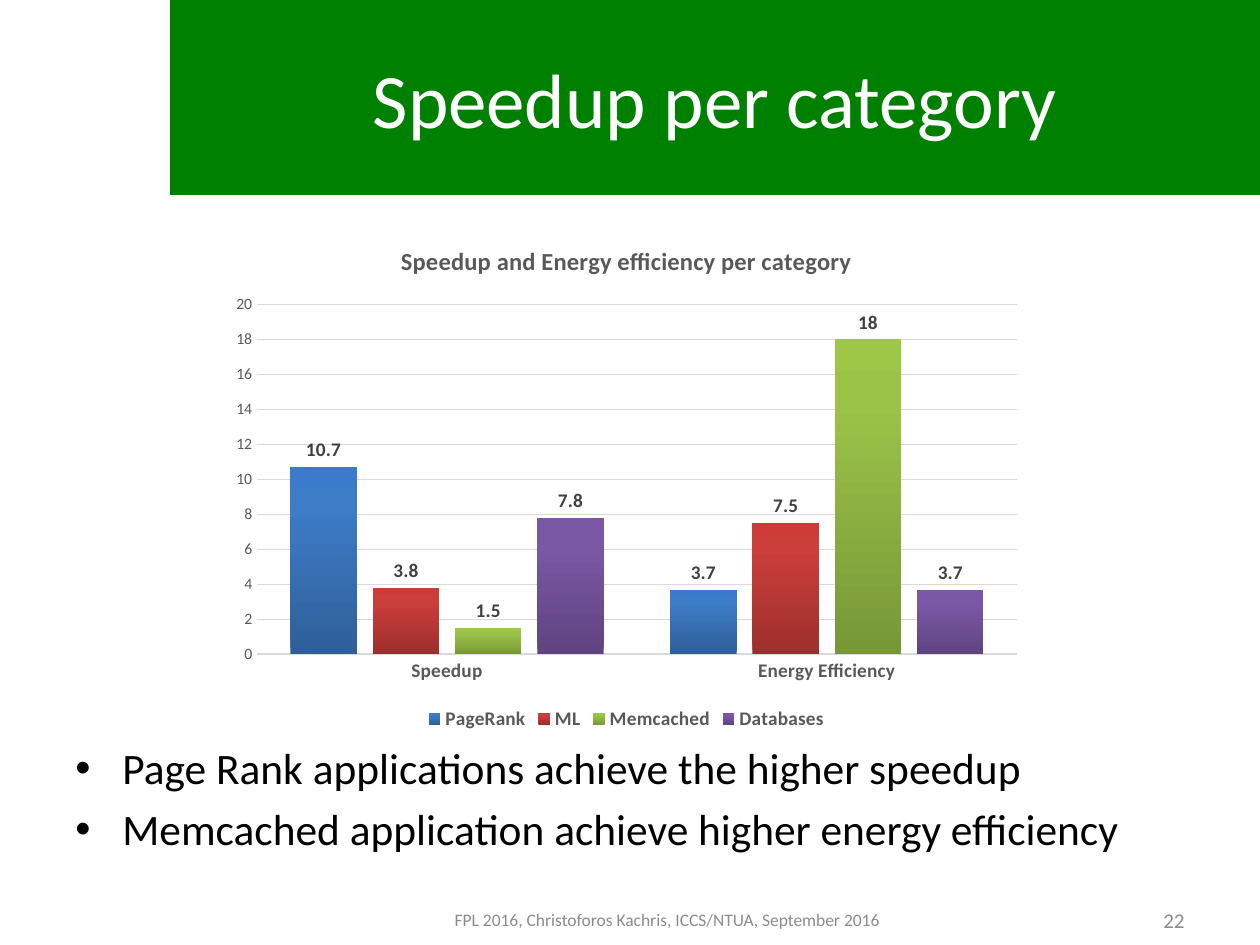
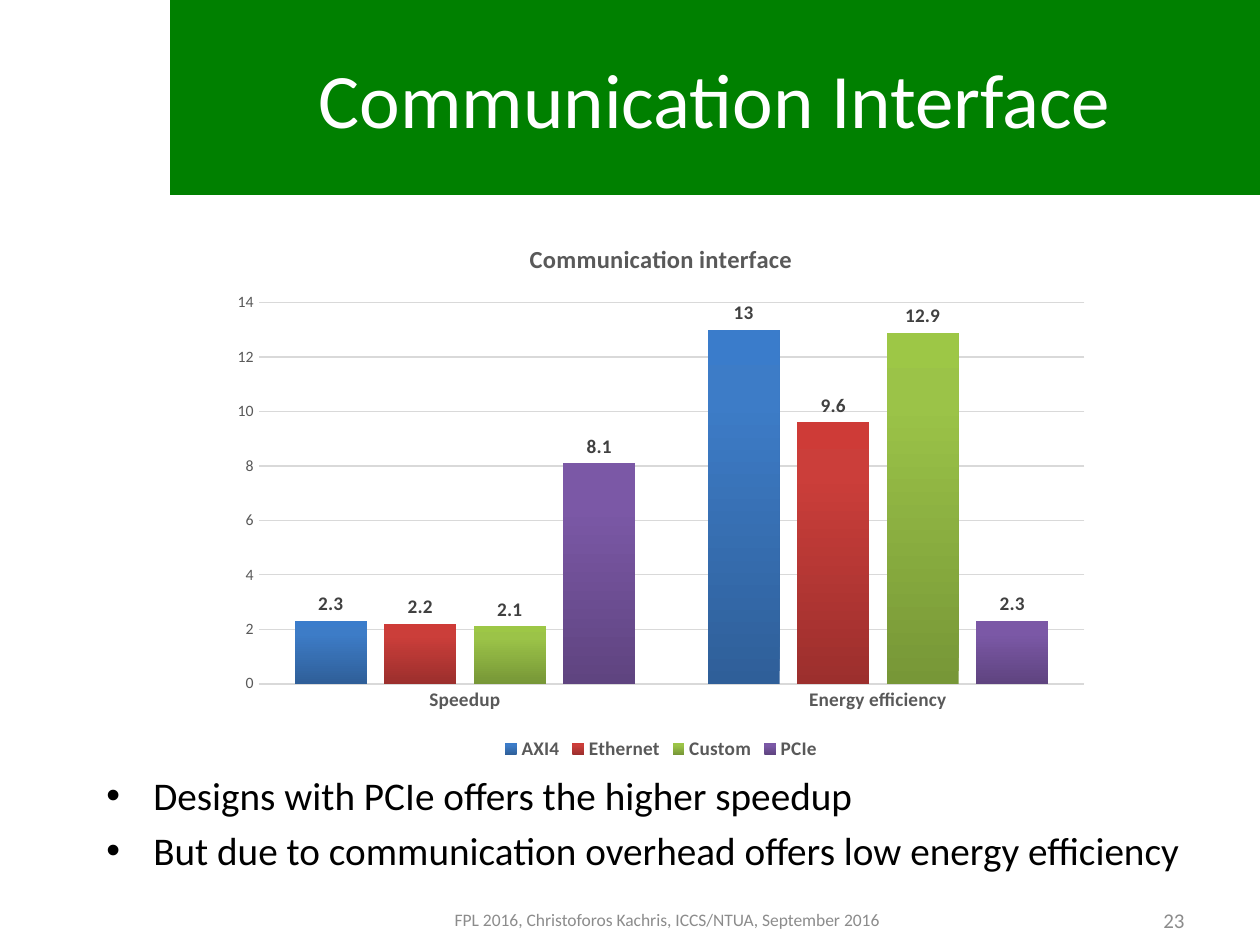
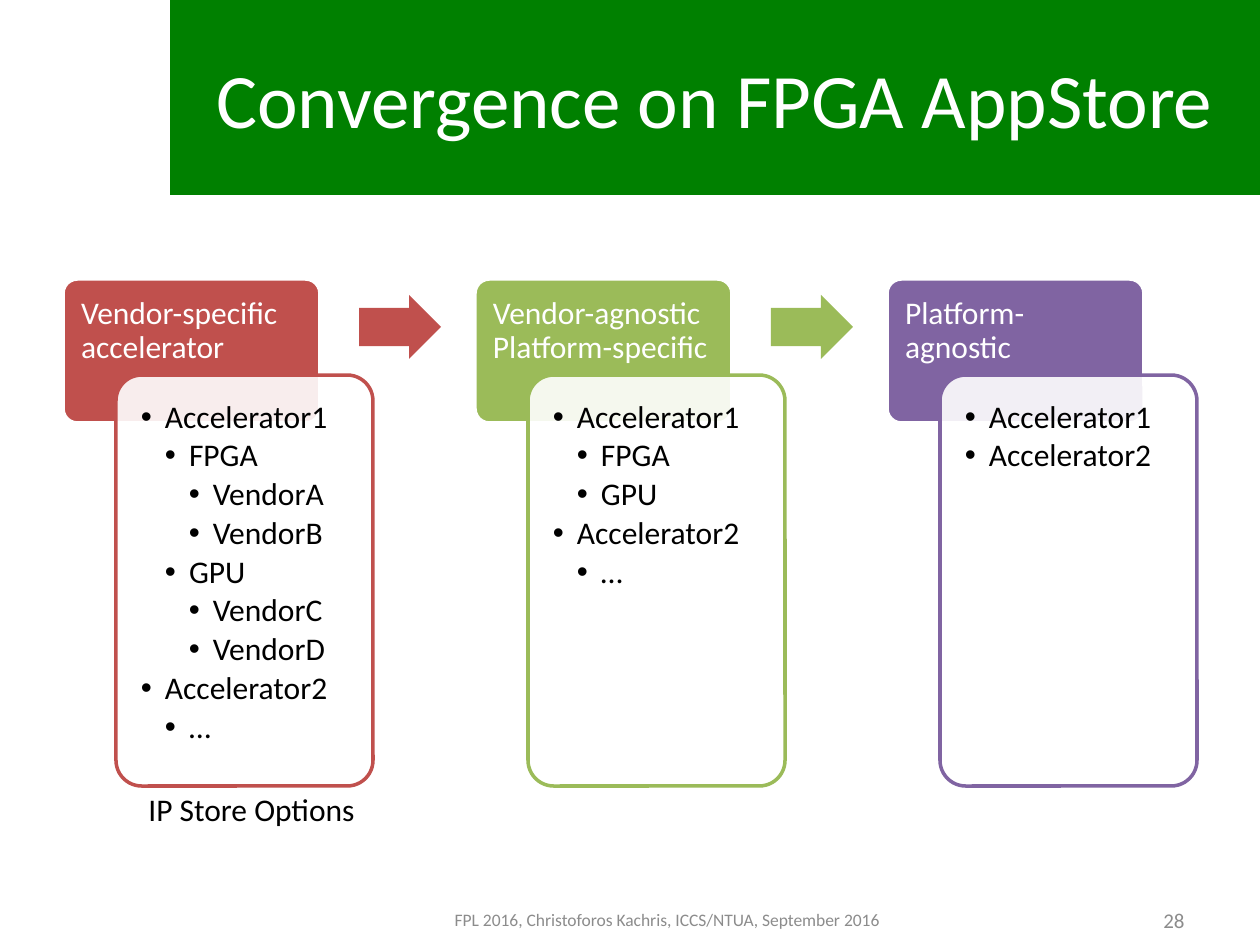
from copy import deepcopy

from lxml import etree
from pptx import Presentation
from pptx.chart.data import CategoryChartData
from pptx.dml.color import RGBColor
from pptx.enum.chart import (XL_CHART_TYPE, XL_LABEL_POSITION,
                             XL_LEGEND_POSITION, XL_TICK_MARK)
from pptx.enum.shapes import MSO_SHAPE
from pptx.enum.text import MSO_ANCHOR, PP_ALIGN
from pptx.oxml.ns import qn
from pptx.util import Pt

COLUMN = XL_CHART_TYPE.COLUMN_CLUSTERED
OUTSIDE = XL_LABEL_POSITION.OUTSIDE_END
BELOW = XL_LEGEND_POSITION.BOTTOM
NO_TICK = XL_TICK_MARK.NONE
RECT, ROUND, ARROW = (MSO_SHAPE.RECTANGLE, MSO_SHAPE.ROUNDED_RECTANGLE,
                      MSO_SHAPE.RIGHT_ARROW)
TOP, MIDDLE = MSO_ANCHOR.TOP, MSO_ANCHOR.MIDDLE
LEFT, CENTER, RIGHT = PP_ALIGN.LEFT, PP_ALIGN.CENTER, PP_ALIGN.RIGHT

SCALE = 914400 / 126
FONT = "Calibri"
FOOTER = "FPL 2016, Christoforos Kachris, ICCS/NTUA, September 2016"
COLORS = {
    "band": "008000", "white": "FFFFFF", "black": "000000", "foot": "8C8C8C",
    "axis": "595959", "label": "404040", "grid": "D9D9D9",
    "red": "C0504D", "green": "9BBB59", "purple": "8064A2",
}
STOPS = (0, 0.8, 1)
BARS = (
    ("2F5F99", "3D7CC7", "3A7CCB"),
    ("9C2F2D", "CB3E3A", "CE3B37"),
    ("779737", "9BC348", "9DC746"),
    ("5F4480", "7B58A6", "7C57A8"),
)


def px(n):
    return round(n * SCALE)


def rgb(name):
    return RGBColor.from_string(COLORS.get(name, name))


class Deck:
    def __init__(self):
        self.prs = Presentation()
        self.prs.slide_width, self.prs.slide_height = px(1260), px(945)
        self.slide = None

    def page(self, title, number):
        """Start a slide with its title band and footer."""
        self.slide = self.prs.slides.add_slide(self.prs.slide_layouts[6])
        band = self.shape(RECT, (170, 0, 1090, 195), "band")
        self.put(band.text_frame, [(title, 0)], 44, "white", CENTER, MIDDLE)
        self.text((357, 895, 620, 50), [(FOOTER, 0)], 10, "foot", CENTER, MIDDLE)
        self.text((903, 895, 294, 50), [(str(number), 0)], 12, "foot", RIGHT, MIDDLE)

    def style(self, font, size, color, bold=False):
        font.name, font.size, font.bold = FONT, Pt(size), bold
        font.color.rgb = rgb(color)

    def shape(self, kind, box, fill, line=None, adjust=(), alpha=None):
        item = self.slide.shapes.add_shape(kind, *map(px, box))
        item.shadow.inherit = False
        item.fill.solid()
        item.fill.fore_color.rgb = rgb(fill)
        if alpha:
            tint = next(item._element.iter(qn("a:solidFill")))[0]
            etree.SubElement(tint, qn("a:alpha"), val=str(alpha * 1000))
        if line:
            item.line.color.rgb = rgb(line)
            item.line.width = Pt(2)
        else:
            item.line.fill.background()
        for i, value in enumerate(adjust):
            item.adjustments[i] = value
        return item

    def put(self, frame, rows, size, color, align=LEFT, anchor=TOP,
            step=0, before=0, after=0, lead=None):
        """Fill a frame with (text, level) rows; levels above zero get bullets."""
        frame.vertical_anchor = anchor
        for i, (words, level) in enumerate(rows):
            para = frame.paragraphs[0] if i == 0 else frame.add_paragraph()
            para.alignment = align
            para.space_before = Pt(before if i else 0)
            para.space_after = Pt(after)
            if lead:
                para.line_spacing = lead
            if level:
                props = para._p.get_or_add_pPr()
                props.set("marL", str(px(step * level)))
                props.set("indent", str(-px(step)))
                etree.SubElement(props, qn("a:buFont"), typeface="Arial")
                etree.SubElement(props, qn("a:buChar"), char="•")
            run = para.add_run()
            run.text = words
            self.style(run.font, size, color)

    def text(self, box, rows, size, color, align=LEFT, anchor=TOP,
             wrap=True, inset=None, **gaps):
        frame = self.slide.shapes.add_textbox(*map(px, box)).text_frame
        frame.word_wrap = wrap
        if inset:
            (frame.margin_left, frame.margin_top,
             frame.margin_right, frame.margin_bottom) = map(px, inset)
        self.put(frame, rows, size, color, align, anchor, **gaps)

    def points(self, box, lines, size):
        self.text(box, [(line, 1) for line in lines], size, "black",
                  step=47, before=size / 5)

    def chart(self, box, title, cats, rows, top):
        data = CategoryChartData()
        data.categories = cats
        for name, values in rows:
            data.add_series(name, values)
        chart = self.slide.shapes.add_chart(COLUMN, *map(px, box), data).chart
        self.style(chart.font, 10, "black")

        # Title and legend
        chart.has_title = True
        run = chart.chart_title.text_frame.paragraphs[0].add_run()
        run.text = title
        self.style(run.font, 14, "axis", True)
        chart.chart_title.include_in_layout = False
        chart.has_legend = True
        chart.legend.position = BELOW
        chart.legend.include_in_layout = False
        self.style(chart.legend.font, 11, "axis", True)

        # Axes
        cat, val = chart.category_axis, chart.value_axis
        for axis, size, bold in ((cat, 11, True), (val, 9, False)):
            axis.major_tick_mark = axis.minor_tick_mark = NO_TICK
            self.style(axis.tick_labels.font, size, "axis", bold)
        val.minimum_scale, val.maximum_scale, val.major_unit = 0, top, 2
        val.format.line.fill.background()
        grid = val.major_gridlines.format.line
        for line, width in ((cat.format.line, 1), (grid, 0.75)):
            line.color.rgb = rgb("grid")
            line.width = Pt(width)

        # Bars
        plot = chart.plots[0]
        plot.gap_width, plot.overlap, plot.vary_by_categories = 100, -24, False
        for bar, shades in zip(plot.series, BARS):
            self.shade(bar, shades)
            labels = bar.data_labels
            labels.show_value, labels.position = True, OUTSIDE
            self.style(labels.font, 11, "label", True)

    def shade(self, bar, shades):
        fill = bar.format.fill
        fill.gradient()
        fill.gradient_angle = 90
        stops = next(bar._element.iter(qn("a:gsLst")))
        stops.append(deepcopy(stops[-1]))
        for stop, place, tone in zip(fill.gradient_stops, STOPS, shades):
            stop.position = place
            stop.color.rgb = rgb(tone)

    def stage(self, left, color, head, rows, arrow):
        """Draw one stage: header, list card and arrow to the next."""
        self.shape(ROUND, (left, 279, 257, 144), color, "white", [0.1])
        self.text((left, 279, 257, 97), [(head, 0)], 18, "white",
                  inset=(18, 18, 18, 9), lead=0.9)
        self.shape(ROUND, (left + 53, 375, 257, 411), "white", color, [0.1], 90)
        self.text((left + 60, 383, 242, 396), rows, 18, "black",
                  inset=(18, 18, 18, 18), step=24, after=2.7, lead=0.9)
        if arrow:
            self.shape(ARROW, (left + 296, 295, 82, 64), color, adjust=[0.6, 0.5])


def main():
    deck = Deck()

    # Speedup per category
    deck.page("Speedup per category", 22)
    deck.points((63, 735, 1134, 110),
                ["Page Rank applications achieve the higher speedup",
                 "Memcached application achieve higher energy efficiency"], 24.8)
    deck.chart((220, 223, 813, 513), "Speedup and Energy efficiency per category",
               ["Speedup", "Energy Efficiency"],
               [("PageRank", (10.7, 3.7)), ("ML", (3.8, 7.5)),
                ("Memcached", (1.5, 18)), ("Databases", (7.8, 3.7))], 20)

    # Communication interface
    deck.page("Communication Interface", 23)
    deck.points((94, 765, 1134, 110),
                ["Designs with PCIe offers the higher speedup",
                 "But due to communication overhead offers low energy efficiency"], 22.4)
    deck.chart((220, 220, 882, 546), "Communication interface",
               ["Speedup", "Energy efficiency"],
               [("AXI4", (2.3, 13)), ("Ethernet", (2.2, 9.6)),
                ("Custom", (2.1, 12.9)), ("PCIe", (8.1, 2.3))], 14)

    # Three stages of convergence
    deck.page("Convergence on FPGA AppStore", 28)
    deck.text((136, 784, 234, 50), [("IP Store Options", 0)], 18, "black", wrap=False)
    first, last = ("Accelerator1", 1), ("Accelerator2", 1)
    fpga, gpu, more = ("FPGA", 2), ("GPU", 2), ("…", 2)
    stages = [
        ("red", "Vendor-specific accelerator",
         [first, fpga, ("VendorA", 3), ("VendorB", 3),
          gpu, ("VendorC", 3), ("VendorD", 3), last, more]),
        ("green", "Vendor-agnostic Platform-specific",
         [first, fpga, gpu, last, more]),
        ("purple", "Platform-agnostic", [first, last]),
    ]
    for i, (color, head, rows) in enumerate(stages):
        deck.stage(63 + 412 * i, color, head, rows, i < len(stages) - 1)

    deck.prs.save("out.pptx")


if __name__ == "__main__":
    main()
